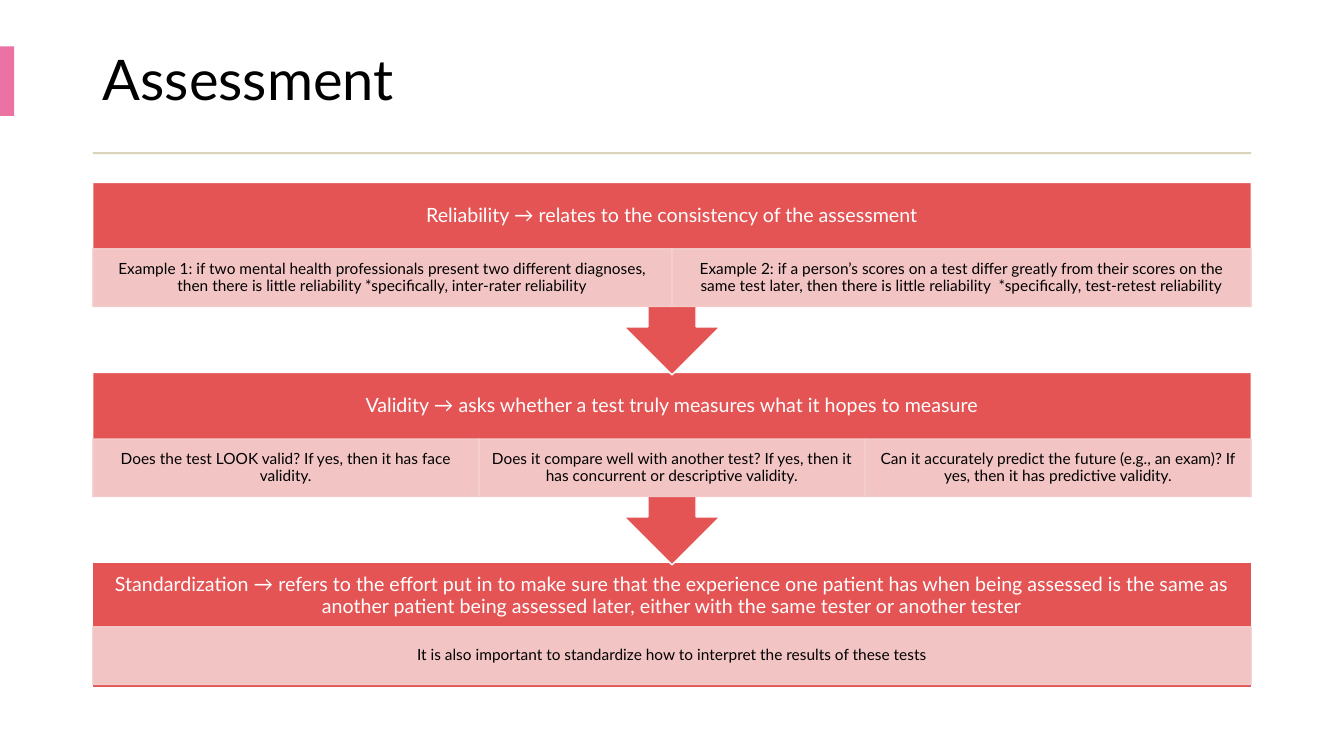
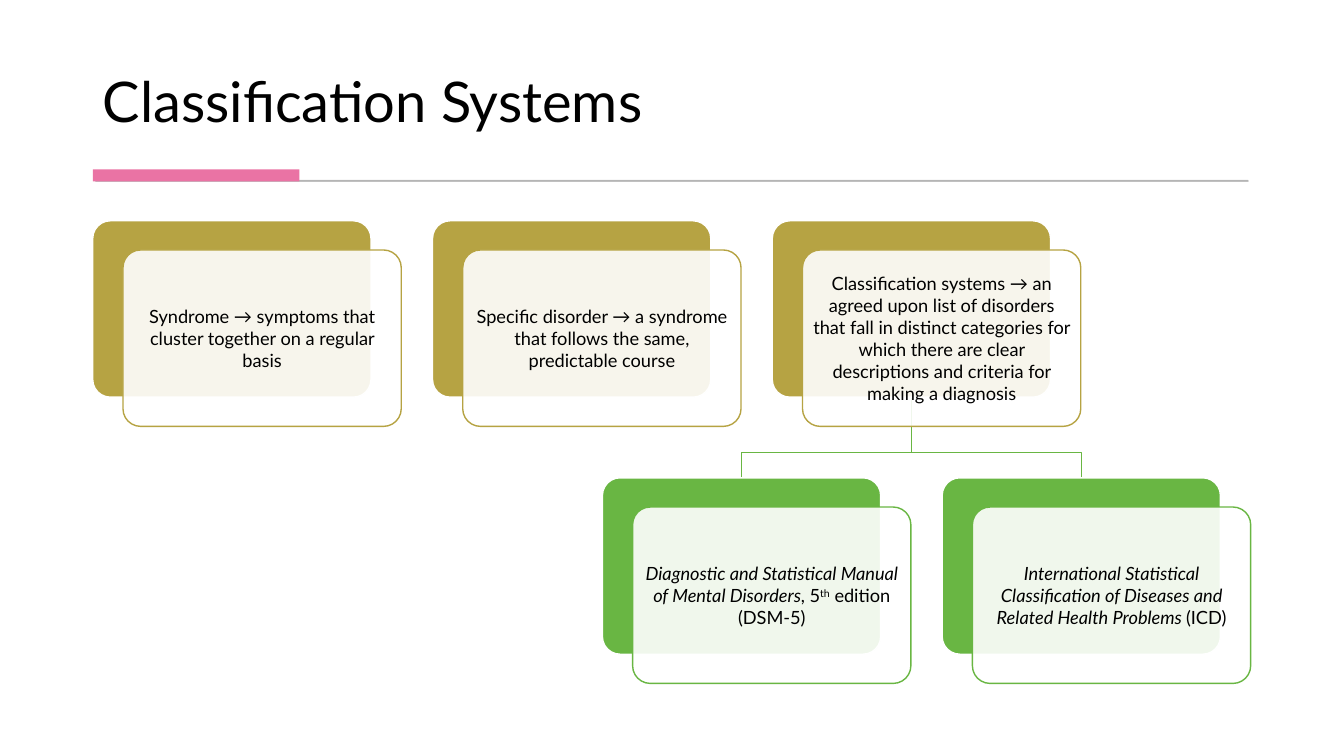
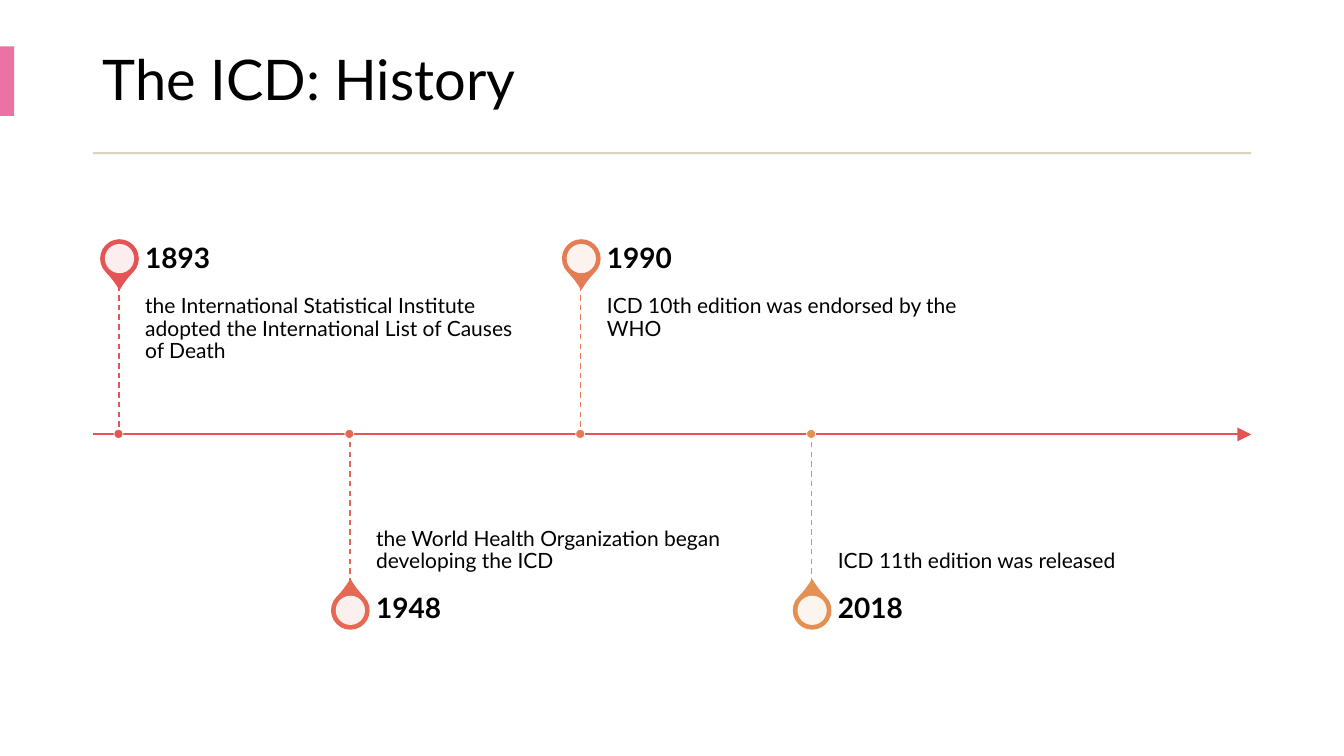
from lxml.etree import SubElement
from pptx import Presentation
from pptx.dml.color import RGBColor
from pptx.enum.dml import MSO_LINE
from pptx.enum.shapes import MSO_CONNECTOR, MSO_SHAPE
from pptx.enum.text import MSO_ANCHOR, MSO_AUTO_SIZE, PP_ALIGN
from pptx.oxml.ns import qn
from pptx.util import Inches, Pt

FONT = "Lato"
BLACK, WHITE = "000000", "FFFFFF"
PINK, RULE, GRAY = "EA73A4", "DAD4BC", "595959"
RED, BLUSH = "E55454", "F5D1D1"
GOLD, GREEN = "B6A343", "69B643"
LEFT, WIDE = 0.92, 11.49

CHAIN = [
    ("Reliability → relates to the consistency of the assessment",
     ["Example 1: if two mental health professionals present two different diagnoses, "
      "then there is little reliability *specifically, inter-rater reliability",
      "Example 2: if a person’s scores on a test differ greatly from their scores on the "
      "same test later, then there is little reliability  *specifically, test-retest reliability"]),
    ("Validity → asks whether a test truly measures what it hopes to measure",
     ["Does the test LOOK valid? If yes, then it has face validity.",
      "Does it compare well with another test? If yes, then it has concurrent or "
      "descriptive validity.",
      "Can it accurately predict the future (e.g., an exam)? If yes, then it has "
      "predictive validity."]),
    ("Standardization → refers to the effort put in to make sure that the experience one "
     "patient has when being assessed is the same as another patient being assessed later, "
     "either with the same tester or another tester",
     ["It is also important to standardize how to interpret the results of these tests"]),
]

TERMS = [
    [("Syndrome → symptoms that cluster together on a regular basis", "")],
    [("Specific disorder → a syndrome that follows the same, predictable course", "")],
    [("Classification systems → an agreed upon list of disorders that fall in distinct "
      "categories for which there are clear descriptions and criteria for making a "
      "diagnosis", "")],
]
BOOKS = [
    [("Diagnostic and Statistical Manual of Mental Disorders", "italic"), (", 5", ""),
     ("th", "super"), (" edition (DSM-5)", "")],
    [("International Statistical Classification of Diseases and Related Health Problems ",
      "italic"), ("(ICD)", "")],
]

EVENTS = [
    ("1893", "the International Statistical Institute adopted the International List of "
     "Causes of Death", "E55454"),
    ("1948", "the World Health Organization began developing the ICD", "E56854"),
    ("1990", "ICD 10th edition was endorsed by the WHO", "E57C53"),
    ("2018", "ICD 11th edition was released", "E59053"),
]


def rgb(code):
    """Turn a hex string into a colour."""
    return RGBColor.from_string(code)


def paint(fill, code, alpha=100):
    """Give a fill a solid colour, see-through if alpha is below 100."""
    fill.solid()
    fill.fore_color.rgb = rgb(code)
    if alpha < 100:
        tint = fill._xPr.find(qn("a:solidFill"))[0]
        SubElement(tint, qn("a:alpha")).set("val", str(alpha * 1000))


def draw(slide, kind, box, code, alpha=100, line=None, width=1, fade=100):
    """Add a preset shape with flat fill and optional outline."""
    shape = slide.shapes.add_shape(kind, *map(Inches, box))
    shape.shadow.inherit = False
    paint(shape.fill, code, alpha)
    if line:
        paint(shape.line.fill, line, fade)
        shape.line.width = Pt(width)
    else:
        shape.line.fill.background()
    return shape


def write(shape, parts, size, code=BLACK, align=PP_ALIGN.CENTER, anchor=MSO_ANCHOR.MIDDLE,
          pads=(0.1, 0.05, 0.1, 0.05), space=0.9, bold=False):
    """Fill a shape with one paragraph of styled runs."""
    frame = shape.text_frame
    frame.word_wrap, frame.auto_size = True, MSO_AUTO_SIZE.NONE
    frame.vertical_anchor = anchor
    (frame.margin_left, frame.margin_top,
     frame.margin_right, frame.margin_bottom) = map(Inches, pads)
    para = frame.paragraphs[0]
    para.alignment, para.line_spacing = align, space
    for text, style in parts:
        run = para.add_run()
        run.text = text
        font = run.font
        font.name, font.size, font.bold = FONT, Pt(size), bold
        font.color.rgb = rgb(code)
        font.italic = style == "italic"
        if style == "super":
            run._r.get_or_add_rPr().set("baseline", "30000")


def label(slide, box, text, size, **style):
    """Add a left-aligned text box."""
    note = slide.shapes.add_textbox(*map(Inches, box))
    write(note, [(text, "")], size, align=PP_ALIGN.LEFT, **style)


def link(slide, start, end, code, width):
    """Add a straight line without shadow."""
    line = slide.shapes.add_connector(MSO_CONNECTOR.STRAIGHT, *map(Inches, start + end))
    line.line.color.rgb = rgb(code)
    line.line.width = Pt(width)
    SubElement(line._element.spPr, qn("a:effectLst"))
    return line


def start(deck, title, box, anchor):
    """Add a slide and set its title."""
    slide = deck.slides.add_slide(deck.slide_layouts[5])
    head = slide.shapes.title
    head.left, head.top, head.width, head.height = map(Inches, box)
    write(head, [(title, "")], 40, align=PP_ALIGN.LEFT, anchor=anchor)
    return slide


def side(deck, title):
    """Start a slide with a tab at the edge and a rule under the title."""
    slide = start(deck, title, (LEFT, 0.27, WIDE, 1.1), MSO_ANCHOR.MIDDLE)
    draw(slide, MSO_SHAPE.RECTANGLE, (0, 0.46, 0.14, 0.69), PINK)
    draw(slide, MSO_SHAPE.RECTANGLE, (LEFT, 1.51, WIDE, 0.02), RULE)
    return slide


def under(deck, title):
    """Start a slide with a grey rule and a pink bar under the title."""
    slide = start(deck, title, (LEFT, 0.28, WIDE, 1.11), MSO_ANCHOR.BOTTOM)
    draw(slide, MSO_SHAPE.RECTANGLE, (0.95, 1.79, 11.43, 0.01), GRAY, 30, GRAY, 0.75, 30)
    draw(slide, MSO_SHAPE.RECTANGLE, (LEFT, 1.68, 2.05, 0.12), PINK)
    return slide


def stage(slide, left, top, wide, head, notes, last):
    """Draw one step of the chain: a red band over a row of notes."""
    kind = MSO_SHAPE.RECTANGLE if last else MSO_SHAPE.DOWN_ARROW_CALLOUT
    band = draw(slide, kind, (left, top, wide, 1.24 if last else 1.91), RED, line=WHITE)
    write(band, [(head, "")], 14, WHITE, pads=(0.11, 0.11, 0.11, 0.68))
    cell = wide / len(notes)
    drop = 0.64 if last else 0.66
    for i, text in enumerate(notes):
        box = (left + i * cell, top + drop, cell, 0.57)
        note = draw(slide, MSO_SHAPE.RECTANGLE, box, BLUSH, 90, BLUSH, 1, 90)
        write(note, [(text, "")], 11, pads=(0.09, 0.02, 0.09, 0.02))


def card(slide, left, top, code, parts):
    """Draw a coloured card with a white text card set off over it."""
    back = draw(slide, MSO_SHAPE.ROUNDED_RECTANGLE, (left, top, 2.76, 1.75), code, line=WHITE)
    front = draw(slide, MSO_SHAPE.ROUNDED_RECTANGLE, (left + 0.3, top + 0.29, 2.76, 1.75),
                 WHITE, 90, code)
    for shape in (back, front):
        shape.adjustments[0] = 0.1
    write(front, parts, 13, pads=(0.05,) * 4, space=1)


def fork(slide, mid, top, half, code):
    """Draw a stem that splits into two legs."""
    bar, foot = Inches(top + 0.55), Inches(top + 0.8)
    left, stem, right = map(Inches, (mid - half, mid, mid + half))
    pen = slide.shapes.build_freeform(left, foot)
    pen.add_line_segments([(left, bar), (right, bar), (right, foot)], close=False)
    pen.move_to(stem, bar)
    pen.add_line_segments([(stem, Inches(top))], close=False)
    tree = pen.convert_to_shape()
    tree.shadow.inherit = False
    tree.fill.background()
    tree.line.color.rgb = rgb(code)
    tree.line.width = Pt(1)


def event(slide, mid, axis, up, year, text, code):
    """Draw a pin, its dashed stem and its text on one side of the axis."""
    def place(gap, high):
        """Find the top of a part that begins gap away from the axis."""
        return axis - gap - high if up else axis + gap

    pin = draw(slide, MSO_SHAPE.TEAR, (mid - 0.18, place(1.56, 0.37), 0.37, 0.37),
               code, line=code)
    pin.adjustments[0] = 1.15
    pin.rotation = 135 if up else 315
    draw(slide, MSO_SHAPE.OVAL, (mid - 0.14, place(1.6, 0.29), 0.29, 0.29), WHITE, 90)
    pads = (0, 0.1, 0.1, 0.16) if up else (0, 0.16, 0, 0.1)
    label(slide, (mid + 0.26, place(0, 1.48), 3.82, 1.48), text, 15, pads=pads,
          anchor=MSO_ANCHOR.TOP if up else MSO_ANCHOR.BOTTOM)
    label(slide, (mid + 0.26, place(1.48, 0.52), 3.82, 0.52), year, 20,
          pads=(0, 0, 0.14, 0), bold=True)
    stem = link(slide, (mid, place(1.48, 0)), (mid, axis), code, 1)
    stem.line.dash_style = MSO_LINE.DASH
    draw(slide, MSO_SHAPE.OVAL, (mid - 0.05, axis - 0.05, 0.09, 0.09), code,
         line=WHITE, width=0.5)


def assess(deck):
    """Build the chain of assessment terms, last step at the back."""
    slide = side(deck, "Assessment")
    final = len(CHAIN) - 1
    for i in range(final, -1, -1):
        stage(slide, LEFT, 1.81 + i * 1.885, WIDE, *CHAIN[i], last=i == final)


def systems(deck):
    """Build the tree of classification terms."""
    slide = under(deck, "Classification Systems")
    step = 3.37
    fork(slide, LEFT + 2 * step + 1.38, 3.94, step / 2, GREEN)
    for i, parts in enumerate(TERMS):
        card(slide, LEFT + i * step, 2.19, GOLD, parts)
    for i, parts in enumerate(BOOKS):
        card(slide, LEFT + (i + 1.5) * step, 4.74, GREEN, parts)


def history(deck):
    """Build the timeline with events above and below in turn."""
    slide = side(deck, "The ICD: History")
    axis = 4.31
    arrow = link(slide, (LEFT, axis), (LEFT + WIDE, axis), RED, 1.5)
    tail = SubElement(arrow.line._get_or_add_ln(), qn("a:tailEnd"))
    for key, value in (("type", "triangle"), ("w", "lg"), ("len", "lg")):
        tail.set(key, value)
    for i, (year, text, code) in enumerate(EVENTS):
        event(slide, 1.18 + i * 2.29, axis, i % 2 == 0, year, text, code)


def main():
    """Build the deck and save it."""
    deck = Presentation()
    deck.slide_width, deck.slide_height = Inches(13.33), Inches(7.5)
    assess(deck)
    systems(deck)
    history(deck)
    deck.save("out.pptx")


if __name__ == "__main__":
    main()
